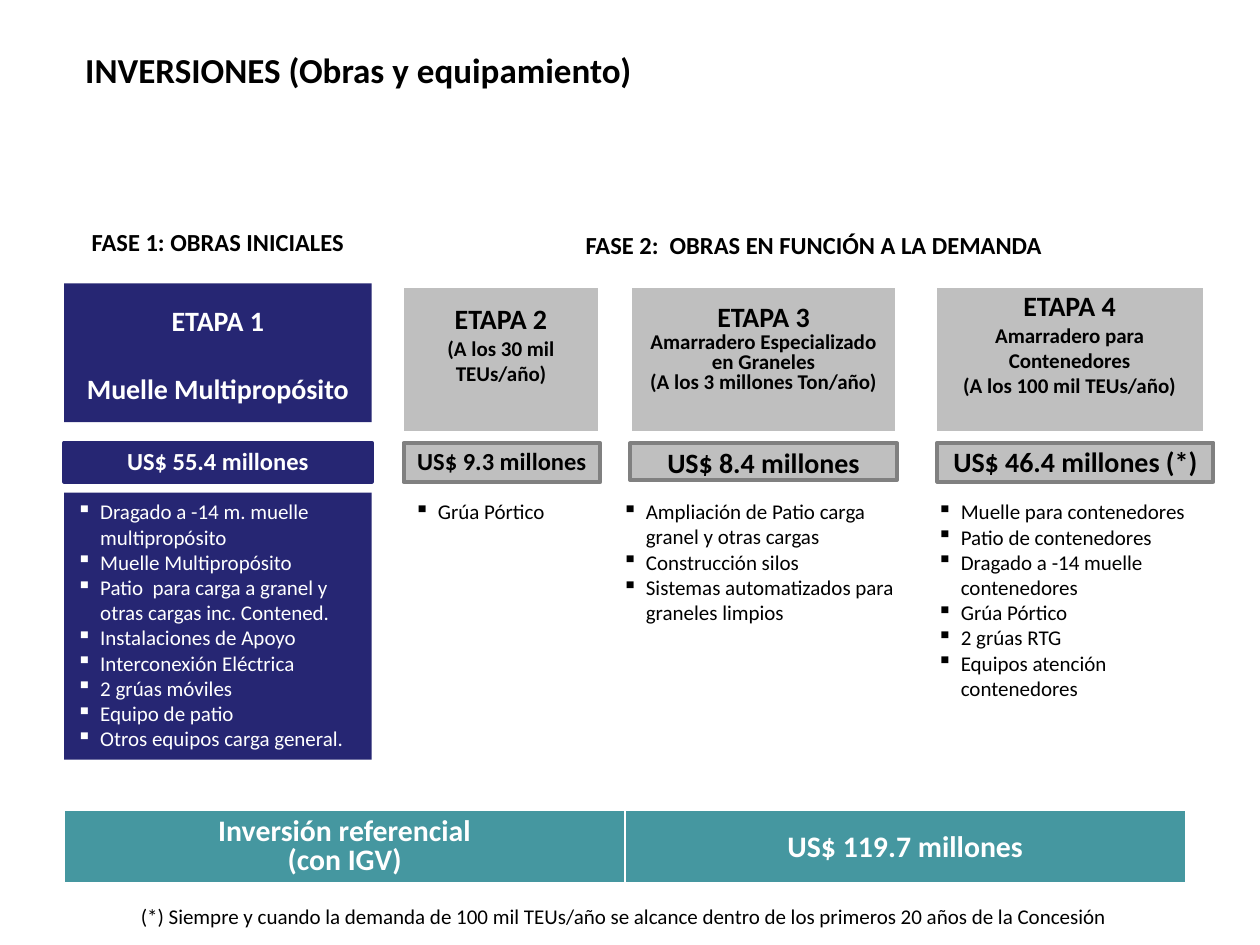
from lxml import etree
from pptx import Presentation
from pptx import util as u
from pptx.dml import color
from pptx.enum import shapes, text
from pptx.oxml import ns

Pt = u.Pt
theme = {
    "font": "Calibri",
    "black": "000000", "white": "FFFFFF", "navy": "262673",
    "silver": "BFBFBF", "gray": "808080", "teal": "4597A0",
    "title": 20, "total": 17, "stage": 16, "label": 14, "body": 12,
}
CENTER = text.PP_ALIGN.CENTER
LEFT = text.PP_ALIGN.LEFT
TOP = text.MSO_ANCHOR.TOP
MIDDLE = text.MSO_ANCHOR.MIDDLE


def rgb(name):
    return color.RGBColor.from_string(theme[name])


def write(frame, lines, ink, bold=True, align=CENTER, spacing=1.0, bullet=False):
    """Fill a text frame from (text, size) pairs, one paragraph each."""
    for index, (words, size) in enumerate(lines):
        paragraph = frame.paragraphs[0] if index == 0 else frame.add_paragraph()
        paragraph.alignment = align
        paragraph.line_spacing = spacing
        paragraph.space_before = Pt(0)
        if bullet:
            properties = paragraph._p.get_or_add_pPr()
            properties.set("marL", str(Pt(13.5)))
            properties.set("indent", str(-Pt(13.5)))
            etree.SubElement(properties, ns.qn("a:buChar")).set("char", "▪")
        run = paragraph.add_run()
        run.text = words
        run.font.name = theme["font"]
        run.font.size = Pt(theme[size])
        run.font.bold = bold
        run.font.color.rgb = rgb(ink)


def add_box(left, top, width, height, fill=None, line=None, line_width=2.25, holder=None):
    """Add a rectangle, or format the given placeholder as one."""
    if holder is None:
        shape = slide.shapes.add_shape(
            shapes.MSO_SHAPE.RECTANGLE, Pt(left), Pt(top), Pt(width), Pt(height))
        shape.shadow.inherit = False
    else:
        shape = holder
        shape.left, shape.top, shape.width, shape.height = map(Pt, (left, top, width, height))
    for part, name in ((shape.fill, fill), (shape.line.fill, line)):
        if name:
            part.solid()
            part.fore_color.rgb = rgb(name)
        else:
            part.background()
    if line:
        shape.line.width = Pt(line_width)
    frame = shape.text_frame
    frame.word_wrap = True
    frame.auto_size = text.MSO_AUTO_SIZE.NONE
    frame.vertical_anchor = TOP
    frame.margin_left = frame.margin_right = Pt(7.2)
    frame.margin_top = frame.margin_bottom = Pt(3.6)
    return frame


presentation = Presentation()
presentation.slide_width, presentation.slide_height = Pt(720), Pt(540)
slide = presentation.slides.add_slide(presentation.slide_layouts[0])
subtitle = slide.placeholders[1]

# Title
title = add_box(28, 18.7, 366, 42.5, holder=slide.shapes.title)
title.vertical_anchor = MIDDLE
title.margin_left = Pt(20.7)
write(title, [("INVERSIONES (Obras y equipamiento)", "title")], "black", align=LEFT)

# Phase headings
for words, left, top, width in (
    ("FASE 1: OBRAS INICIALES", 36.7, 128.2, 175.7),
    ("FASE 2:  OBRAS EN FUNCIÓN A LA DEMANDA", 235.4, 129.6, 459.4),
):
    write(add_box(left, top, width, 22), [(words, "label")], "black", spacing=0.9)

# Stages: header box (left, top, width, height), inset above its text, cost box, list
stages = [
    dict(header=(36.7, 162, 175.7, 79.2), inset=11.7, gap=19.5, spacing=1,
         lines=[("ETAPA 1", "stage"), ("Muelle Multipropósito", "stage")],
         cost="US$ 55.4 millones", cost_size="label", cost_box=(36.7, 252.9, 175.7, 22.3),
         list_box=(36.7, 281.5, 175.7, 152.6),
         items=["Dragado a -14 m. muelle multipropósito", "Muelle Multipropósito",
                "Patio  para carga a granel y otras cargas inc. Contened.",
                "Instalaciones de Apoyo", "Interconexión Eléctrica", "2 grúas móviles",
                "Equipo de patio", "Otros equipos carga general."]),
    dict(header=(229.9, 163.4, 112.8, 84.2), inset=9, gap=0, spacing=1,
         lines=[("ETAPA 2", "stage"), ("(A los 30 mil TEUs/año)", "body")],
         cost="US$ 9.3 millones", cost_size="label", cost_box=(230.6, 253.2, 112.4, 22.3),
         list_box=(229.7, 281.5, 112.3, 21.6), items=["Grúa Pórtico"]),
    dict(header=(360, 163.4, 152.6, 84.2), inset=8, gap=0, spacing=0.8,
         lines=[("ETAPA 3", "stage"), ("Amarradero Especializado", "body"),
                ("en Graneles", "body"), ("(A los 3 millones Ton/año)", "body")],
         cost="US$ 8.4 millones", cost_size="stage", cost_box=(360, 253.4, 152.6, 20.9),
         list_box=(348.5, 281.5, 178.6, 80),
         items=["Ampliación de Patio carga granel y otras cargas", "Construcción silos",
                "Sistemas automatizados para graneles limpios"]),
    dict(header=(534.2, 163.4, 154.1, 84.2), inset=1.7, gap=0, spacing=1,
         lines=[("ETAPA 4", "stage"), ("Amarradero para Contenedores", "body"),
                ("(A los 100 mil TEUs/año)", "body")],
         cost="US$ 46.4 millones (*)", cost_size="stage", cost_box=(535.7, 252.9, 157.7, 22.3),
         list_box=(528.5, 281.5, 180, 123.8),
         items=["Muelle para contenedores", "Patio de contenedores",
                "Dragado a -14 muelle contenedores", "Grúa Pórtico", "2 grúas RTG",
                "Equipos atención contenedores"]),
]
for number, stage in enumerate(stages, 1):
    first = number == 1
    fill, ink = ("navy", "white") if first else ("silver", "black")

    header = add_box(*stage["header"], fill, None if first else "white", 2)
    header.margin_top = Pt(stage["inset"])
    write(header, stage["lines"], ink, spacing=stage["spacing"])
    header.paragraphs[0].line_spacing = 1.0
    header.paragraphs[1].space_before = Pt(stage["gap"])

    cost = add_box(*stage["cost_box"], fill, "navy" if first else "gray",
                   holder=subtitle if first else None)
    cost.margin_left = cost.margin_right = Pt(3.6)
    write(cost, [(stage["cost"], stage["cost_size"])], ink, spacing=0.9)

    works = add_box(*stage["list_box"], "navy" if first else None)
    write(works, [(item, "body") for item in stage["items"]], ink,
          bold=False, align=LEFT, bullet=True)

# Total investment
table = slide.shapes.add_table(1, 2, Pt(36.7), Pt(463), Pt(640.8), Pt(42.5)).table
totals = (
    ([("Inversión referencial", "total"), ("(con IGV)", "total")], 0.8),
    ([("US$ 119.7 millones", "total")], 1.0),
)
for cell, (lines, spacing) in zip(table.rows[0].cells, totals):
    properties = cell._tc.get_or_add_tcPr()
    for side, width in (("L", 1), ("R", 1), ("T", 1), ("B", 3)):
        border = etree.SubElement(properties, ns.qn(f"a:ln{side}"), w=str(Pt(width)))
        border_fill = etree.SubElement(border, ns.qn("a:solidFill"))
        etree.SubElement(border_fill, ns.qn("a:srgbClr"), val=theme["white"])
    cell.fill.solid()
    cell.fill.fore_color.rgb = rgb("teal")
    cell.vertical_anchor = MIDDLE
    write(cell.text_frame, lines, "white", spacing=spacing)

# Footnote
write(add_box(73.4, 512.6, 573.1, 21.6),
      [("(*) Siempre y cuando la demanda de 100 mil TEUs/año se alcance dentro de "
        "los primeros 20 años de la Concesión", "body")],
      "black", bold=False, align=LEFT)

presentation.save("out.pptx")
